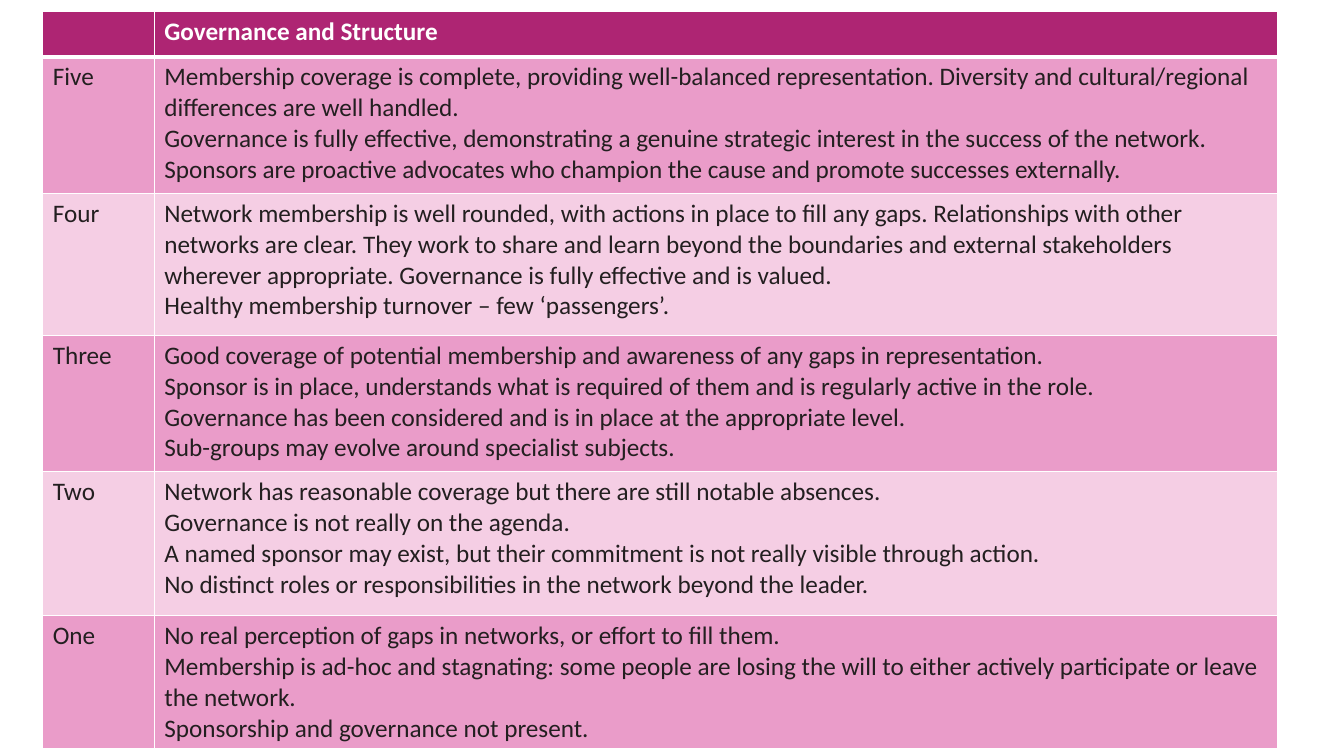
"""Build the governance and structure maturity table slide."""
from dataclasses import dataclass

from lxml.etree import SubElement
from pptx import Presentation
from pptx.dml.color import RGBColor
from pptx.oxml.ns import qn
from pptx.table import _Cell as Cell
from pptx.util import Pt

WHITE = "FFFFFF"
INK = "231F20"
MAGENTA = "AE2573"
PINK = "EA9CC9"
PALE_PINK = "F5CEE4"
COLUMN_WIDTHS = (79.7, 802.3)


@dataclass
class Level:
    name: str
    height: float
    statements: tuple[str, ...]


HEADER = Level("", 32.4, ("Governance and Structure",))
LEVELS = (
    Level("Five", 97.7, (
        "Membership coverage is complete, providing well-balanced representation. "
        "Diversity and cultural/regional differences are well handled.",
        "Governance is fully effective, demonstrating a genuine strategic interest "
        "in the success of the network.",
        "Sponsors are proactive advocates who champion the cause and promote "
        "successes externally.",
    )),
    Level("Four", 101.5, (
        "Network membership is well rounded, with actions in place to fill any gaps. "
        "Relationships with other networks are clear. They work to share and learn "
        "beyond the boundaries and external stakeholders wherever appropriate. "
        "Governance is fully effective and is valued.",
        "Healthy membership turnover – few ‘passengers’.",
    )),
    Level("Three", 97.2, (
        "Good coverage of potential membership and awareness of any gaps in "
        "representation.",
        "Sponsor is in place, understands what is required of them and is regularly "
        "active in the role.",
        "Governance has been considered and is in place at the appropriate level.",
        "Sub-groups may evolve around specialist subjects.",
    )),
    Level("Two", 102.9, (
        "Network has reasonable coverage but there are still notable absences.",
        "Governance is not really on the agenda.",
        "A named sponsor may exist, but their commitment is not really visible "
        "through action.",
        "No distinct roles or responsibilities in the network beyond the leader.",
    )),
    Level("One", 95, (
        "No real perception of gaps in networks, or effort to fill them.",
        "Membership is ad-hoc and stagnating: some people are losing the will to "
        "either actively participate or leave the network.",
        "Sponsorship and governance not present.",
    )),
)


def color(code: str) -> RGBColor:
    """Turn a hex string into a colour."""
    return RGBColor.from_string(code)


def set_borders(cell: Cell, top: float, bottom: float) -> None:
    """Draw white borders round a cell, with widths in points."""
    properties = cell._tc.get_or_add_tcPr()
    widths = {"a:lnL": 1, "a:lnR": 1, "a:lnT": top, "a:lnB": bottom}
    for position, (side, width) in enumerate(widths.items()):
        border = SubElement(properties, qn(side), w=str(Pt(width)))
        fill = SubElement(border, qn("a:solidFill"))
        SubElement(fill, qn("a:srgbClr"), val=WHITE)
        properties.insert(position, border)


def fill_cell(cell: Cell, statements: tuple[str, ...], background: str,
              ink: str, bold: bool) -> None:
    """Write statements as paragraphs on a coloured cell."""
    cell.fill.solid()
    cell.fill.fore_color.rgb = color(background)
    cell.text = "\n".join(statements)
    for paragraph in cell.text_frame.paragraphs:
        paragraph.font.name = "Calibri"
        paragraph.font.size = Pt(18)
        paragraph.font.bold = bold
        paragraph.font.color.rgb = color(ink)


def main() -> None:
    """Create the slide and save it."""
    deck = Presentation()
    deck.slide_width, deck.slide_height = Pt(960), Pt(540)
    slide = deck.slides.add_slide(deck.slide_layouts[6])
    levels = (HEADER, *LEVELS)
    maturity = slide.shapes.add_table(
        len(levels), len(COLUMN_WIDTHS), Pt(30.5), Pt(8.2),
        Pt(sum(COLUMN_WIDTHS)), Pt(sum(level.height for level in levels))).table
    for column, width in zip(maturity.columns, COLUMN_WIDTHS):
        column.width = Pt(width)
    for index, level in enumerate(levels):
        maturity.rows[index].height = Pt(level.height)
        is_header = index == 0
        band = MAGENTA if is_header else (PALE_PINK, PINK)[index % 2]
        ink = WHITE if is_header else INK
        for cell, statements in zip(maturity.rows[index].cells,
                                    ((level.name,), level.statements)):
            fill_cell(cell, statements, band, ink, is_header)
            set_borders(cell, top=3 if index == 1 else 1, bottom=3 if is_header else 1)
    deck.save("out.pptx")


if __name__ == "__main__":
    main()
